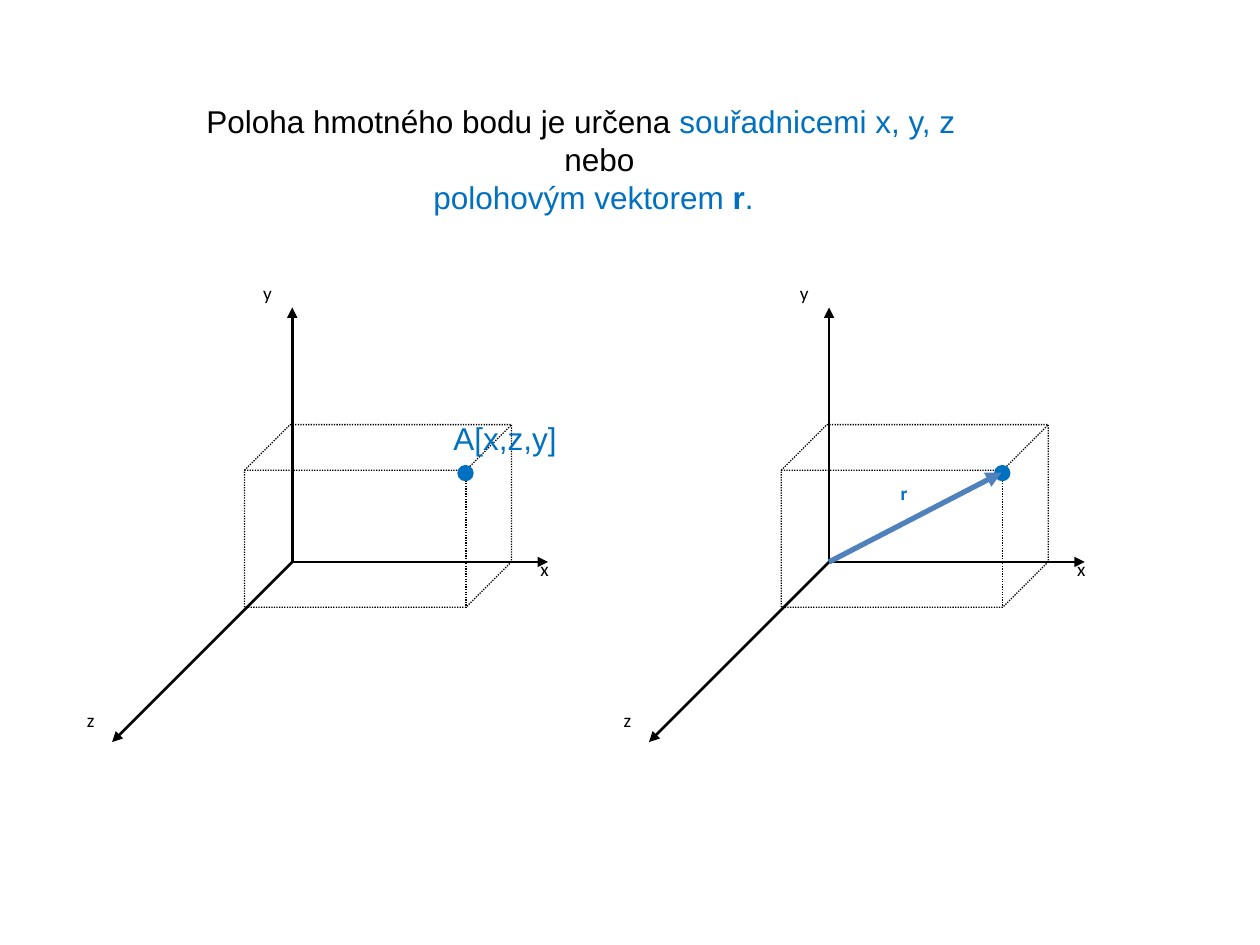
from lxml import etree
from pptx import Presentation
from pptx.dml.color import RGBColor
from pptx.enum.dml import MSO_LINE
from pptx.enum.shapes import MSO_CONNECTOR, MSO_SHAPE
from pptx.enum.text import MSO_AUTO_SIZE
from pptx.oxml.ns import qn
from pptx.util import Inches, Pt

STRAIGHT = MSO_CONNECTOR.STRAIGHT
CUBE = MSO_SHAPE.CUBE
OVAL = MSO_SHAPE.OVAL
DOTTED = MSO_LINE.ROUND_DOT
GROW = MSO_AUTO_SIZE.SHAPE_TO_FIT_TEXT

COLORS = {"ink": "000000", "accent": "0070C0", "vector": "4F81BD"}
BLANK_LAYOUT = 6
ORIGIN_Y = 4.46
AXIS_ENDS = [(0, -2.02), (2.03, 0), (-1.43, 1.43)]
AXIS_LABELS = [("x", 1.87, -0.09), ("y", -0.33, -2.28), ("z", -1.73, 1.11)]

STATEMENT = [
    (0, [("Poloha hmotného bodu je určena ", "ink", False),
         ("souřadnicemi x, y, z", "accent", False)]),
    (2.84, [("nebo", "ink", False)]),
    (1.8, [("polohovým vektorem ", "accent", False),
           ("r", "accent", True),
           (".", "accent", False)]),
]


def color(name):
    return RGBColor.from_string(COLORS[name])


def add_text_frame(shapes, left, top, width, height):
    box = shapes.add_textbox(Inches(left), Inches(top), Inches(width), Inches(height))
    box.text_frame.word_wrap = True
    return box.text_frame


def add_statement(shapes):
    frame = add_text_frame(shapes, 1.54, 0.76, 7.01, 1.01)
    frame.auto_size = GROW
    for index, (indent, pieces) in enumerate(STATEMENT):
        paragraph = frame.add_paragraph() if index else frame.paragraphs[0]
        paragraph._p.get_or_add_pPr().set("marL", str(Inches(indent)))
        paragraph.font.name = "Arial"
        paragraph.font.size = Pt(18)
        for text, tint, bold in pieces:
            run = paragraph.add_run()
            run.text = text
            run.font.bold = bold
            run.font.color.rgb = color(tint)


def add_label(shapes, text, left, top, width=0.88, height=0.55,
              font="Calibri", size=11, tint="ink", bold=False):
    frame = add_text_frame(shapes, left, top, width, height)
    paragraph = frame.paragraphs[0]
    paragraph.text = text
    paragraph.space_after = Pt(10)
    paragraph.font.name = font
    paragraph.font.size = Pt(size)
    paragraph.font.bold = bold
    paragraph.font.color.rgb = color(tint)


def add_arrow(shapes, start, end, tint="ink", width=1.5):
    arrow = shapes.add_connector(STRAIGHT, *(Inches(value) for value in (*start, *end)))
    arrow.line.color.rgb = color(tint)
    arrow.line.width = Pt(width)
    etree.SubElement(arrow.line._get_or_add_ln(), qn("a:tailEnd"), type="triangle")
    etree.SubElement(arrow._element.spPr, qn("a:effectLst"))


def add_dotted_box(shapes, left, top):
    box = shapes.add_shape(CUBE, Inches(left), Inches(top), Inches(2.12), Inches(1.45))
    box.adjustments[0] = 0.25
    box.shadow.inherit = False
    box.fill.background()
    box.line.color.rgb = color("ink")
    box.line.width = Pt(0.75)
    box.line.dash_style = DOTTED


def add_point(shapes, left, top):
    point = shapes.add_shape(OVAL, Inches(left), Inches(top), Inches(0.13), Inches(0.13))
    point.shadow.inherit = False
    point.fill.solid()
    point.fill.fore_color.rgb = color("accent")
    point.line.fill.background()


def add_axes_diagram(slide, origin_x):
    shapes = slide.shapes.add_group_shape().shapes
    origin = (origin_x, ORIGIN_Y)
    for dx, dy in AXIS_ENDS:
        add_arrow(shapes, origin, (origin_x + dx, ORIGIN_Y + dy))
    for name, dx, dy in AXIS_LABELS:
        add_label(shapes, name, origin_x + dx, ORIGIN_Y + dy)
    add_dotted_box(shapes, origin_x - 0.38, ORIGIN_Y - 1.09)
    add_point(shapes, origin_x + 1.31, ORIGIN_Y - 0.77)
    return shapes


def main():
    prs = Presentation()
    prs.slide_width = Inches(10)
    prs.slide_height = Inches(7.5)
    slide = prs.slides.add_slide(prs.slide_layouts[BLANK_LAYOUT])

    add_statement(slide.shapes)
    add_axes_diagram(slide, 2.32)
    vector_diagram = add_axes_diagram(slide, 6.58)
    add_arrow(vector_diagram, (6.58, ORIGIN_Y), (7.95, 3.75), "vector", 3)
    add_label(vector_diagram, "r", 7.05, 3.77, 0.71, 0.43, tint="accent", bold=True)
    add_label(slide.shapes, "A[x,z,y]", 3.5, 3.28, 2.28, 0.4,
              font="Arial", size=18, tint="accent")

    prs.save("out.pptx")


if __name__ == "__main__":
    main()
